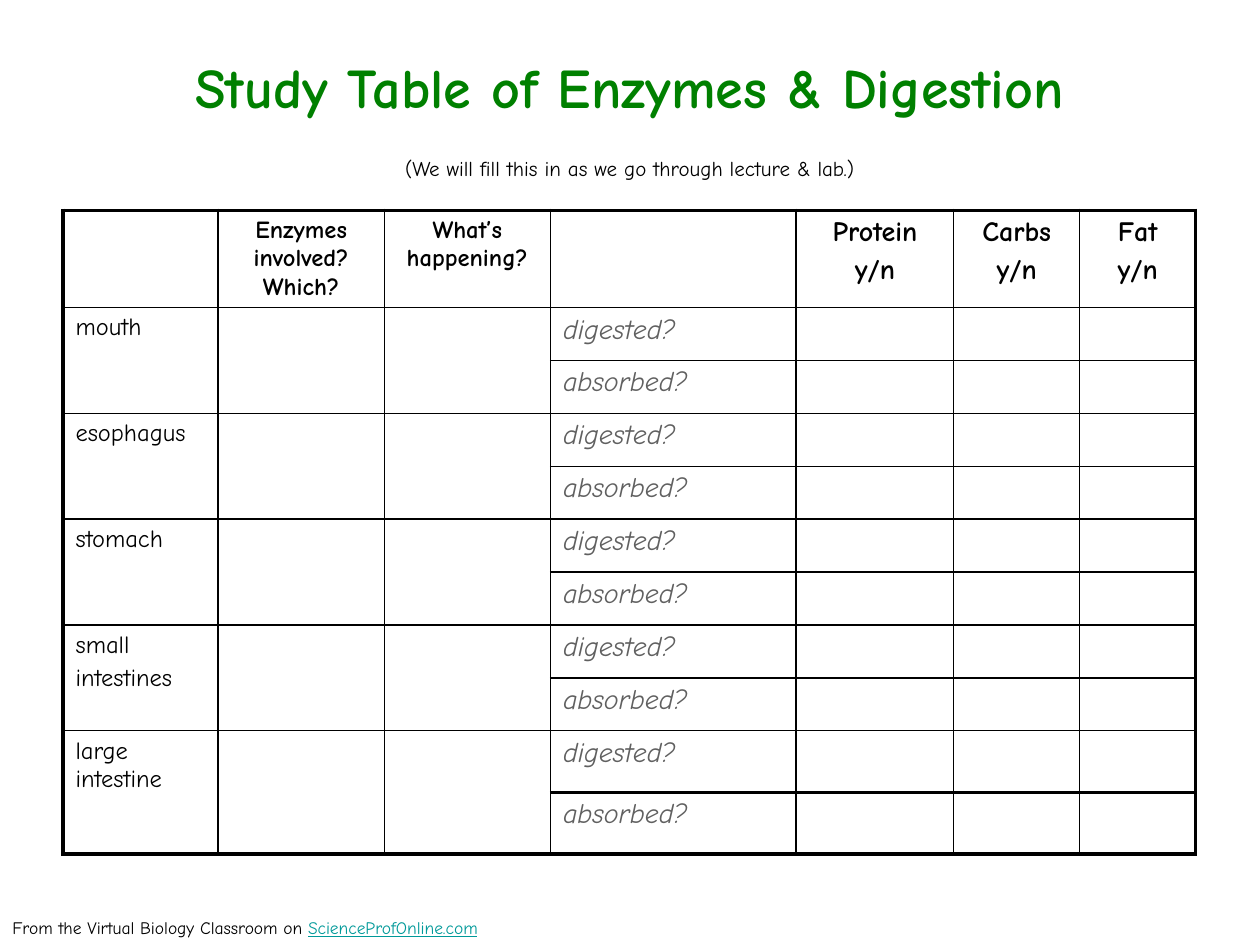
from lxml import etree
from pptx import Presentation
from pptx.dml.color import RGBColor
from pptx.enum.text import MSO_ANCHOR, MSO_AUTO_SIZE, PP_ALIGN
from pptx.oxml.ns import qn
from pptx.util import Inches, Pt

CENTER, LEFT = PP_ALIGN.CENTER, PP_ALIGN.LEFT
MIDDLE = MSO_ANCHOR.MIDDLE
NO_FIT = MSO_AUTO_SIZE.NONE
FONT = "Comic Neue"
BLACK, GREEN, GRAY, TEAL = "000000", "008000", "606060", "009999"
THIN, THICK = 1, 2.25

TITLE = "Study Table of Enzymes & Digestion"
SUBTITLE = "(We will fill this in as we go through lecture & lab.)"
CREDIT = "From the Virtual Biology Classroom on "
SITE = "ScienceProfOnline.com"
HEADERS = [
    (1, 14, ["Enzymes involved? Which?"]),
    (2, 14, ["What’s happening?"]),
    (4, 16, ["Protein", "y/n"]),
    (5, 16, ["Carbs", "y/n"]),
    (6, 16, ["Fat", "y/n"]),
]
ORGANS = [["mouth"], ["esophagus"], ["stomach"], ["small", "intestines"], ["large intestine"]]
QUESTIONS = ["digested?", "absorbed?"]
QUESTION_COLUMN = 3
COLUMN_WIDTHS = [1.23, 1.32, 1.32, 1.95, 1.25, 1, 0.92]
ROW_HEIGHTS = [0.77] + [0.42] * 8 + [0.49] * 2
LAST_ROW, LAST_COLUMN = len(ROW_HEIGHTS) - 1, len(COLUMN_WIDTHS) - 1


def color(value):
    return RGBColor.from_string(value)


def style(font, size, shade, bold=False, italic=False):
    font.name, font.size = FONT, Pt(size)
    font.bold, font.italic = bold, italic
    font.color.rgb = color(shade)


def write(frame, lines, size, shade=BLACK, align=LEFT, **weight):
    for index, line in enumerate(lines):
        para = frame.add_paragraph() if index else frame.paragraphs[0]
        para.text, para.alignment = line, align
        if index:
            para.space_before = Pt(size * 0.2)
        style(para.font, size, shade, **weight)


def add_border(cell, side, width):
    line = etree.SubElement(cell._tc.get_or_add_tcPr(), qn(f"a:ln{side}"), w=str(Pt(width)))
    fill = etree.SubElement(line, qn("a:solidFill"))
    etree.SubElement(fill, qn("a:srgbClr"), val=BLACK)


def frame_cell(cell, row, column):
    heavy = {
        "L": column == 0,
        "R": column == LAST_COLUMN,
        "T": row == 0 or (row == LAST_ROW and column >= QUESTION_COLUMN),
        "B": row >= LAST_ROW - 1,
    }
    for side, is_heavy in heavy.items():
        add_border(cell, side, THICK if is_heavy else THIN)
    cell.fill.background()


def add_heading(page):
    title = page.shapes.title
    title.left, title.top, title.width, title.height = map(Inches, (0.5, 0.3, 9, 1.25))
    frame = title.text_frame
    frame.auto_size, frame.vertical_anchor = NO_FIT, MIDDLE
    write(frame, [TITLE], 32, GREEN, CENTER, bold=True)
    para = frame.add_paragraph()
    para.text, para.alignment, para.space_before = SUBTITLE, CENTER, Pt(20)
    style(para.font, 12, BLACK)


def add_study_table(page):
    holder = page.shapes.add_table(
        len(ROW_HEIGHTS), len(COLUMN_WIDTHS), Inches(0.5), Inches(1.67),
        Inches(sum(COLUMN_WIDTHS)), Inches(sum(ROW_HEIGHTS)))
    table = holder.table
    table.first_row = table.horz_banding = False
    for column, width in zip(table.columns, COLUMN_WIDTHS):
        column.width = Inches(width)
    for row, height in zip(table.rows, ROW_HEIGHTS):
        row.height = Inches(height)
    for row in range(LAST_ROW + 1):
        for column in range(LAST_COLUMN + 1):
            frame_cell(table.cell(row, column), row, column)
    for column, size, lines in HEADERS:
        write(table.cell(0, column).text_frame, lines, size, align=CENTER, bold=True)
    for index, organ in enumerate(ORGANS):
        top = 1 + index * len(QUESTIONS)
        for column in range(QUESTION_COLUMN):
            table.cell(top, column).merge(table.cell(top + 1, column))
        write(table.cell(top, 0).text_frame, organ, 14)
        for offset, question in enumerate(QUESTIONS):
            cell = table.cell(top + offset, QUESTION_COLUMN)
            write(cell.text_frame, [question], 16, GRAY, italic=True)


def add_credit(page):
    box = page.shapes.add_textbox(0, Inches(7.23), Inches(4.3), Inches(0.27))
    box.text_frame.word_wrap = False
    write(box.text_frame, [CREDIT], 10)
    span = box.text_frame.paragraphs[0].add_run()
    span.text = SITE
    span.font.underline = True
    span.font.color.rgb = color(TEAL)


def main():
    deck = Presentation()
    deck.slide_width, deck.slide_height = Inches(10), Inches(7.5)
    page = deck.slides.add_slide(deck.slide_layouts.get_by_name("Title Only"))
    add_heading(page)
    add_study_table(page)
    add_credit(page)
    deck.save("out.pptx")


if __name__ == "__main__":
    main()
